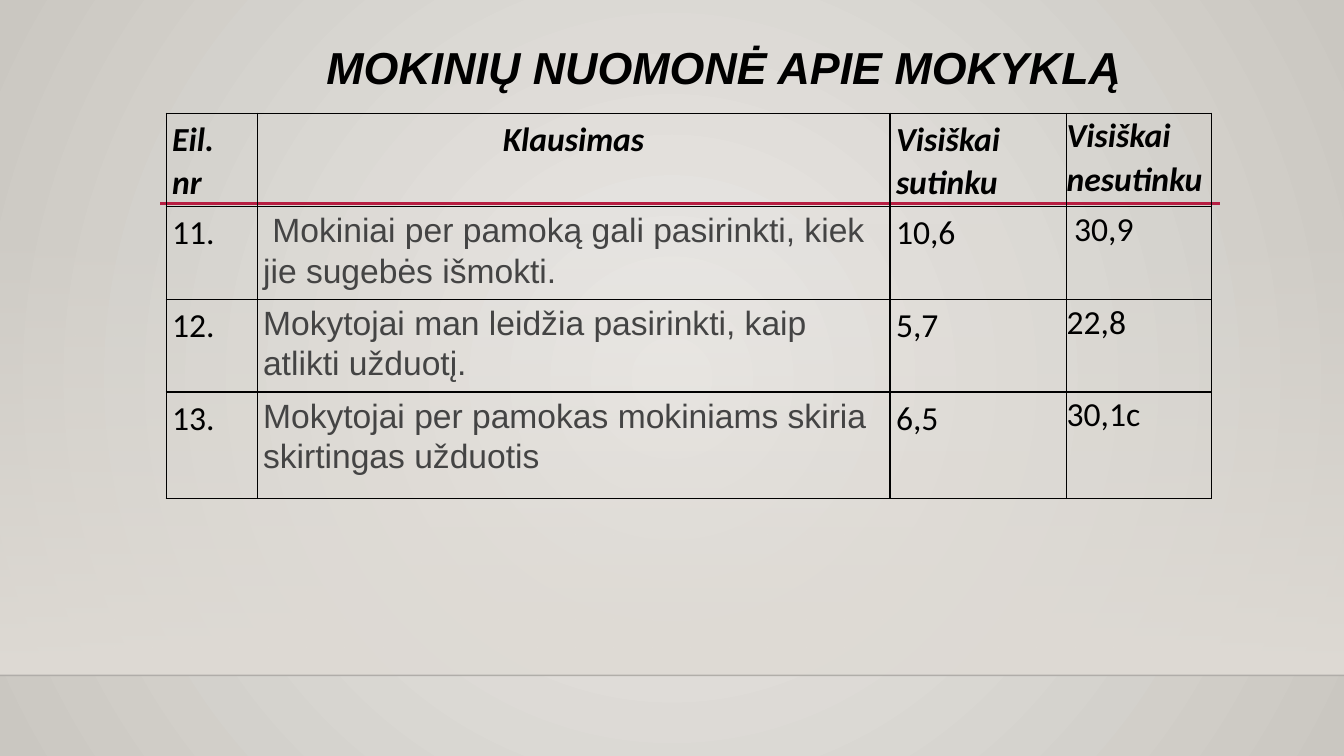
from lxml.etree import SubElement
from pptx import Presentation
from pptx.dml.color import RGBColor
from pptx.enum.shapes import MSO_CONNECTOR, MSO_SHAPE
from pptx.enum.text import PP_ALIGN
from pptx.oxml.ns import qn
from pptx.util import Cm, Pt

HEADINGS = ["Eil.\nnr", "Klausimas", "Visiškai sutinku", "Visiškai nesutinku"]
ANSWERS = [
    ["11.", " Mokiniai per pamoką gali pasirinkti, kiek jie sugebės išmokti.", "10,6", " 30,9"],
    ["12.", "Mokytojai man leidžia pasirinkti, kaip atlikti užduotį.", "5,7", "22,8"],
    ["13.", "Mokytojai per pamokas mokiniams skiria skirtingas užduotis", "6,5", "30,1c"],
]
COLUMN_WIDTHS = [2.29, 15.95, 4.45, 3.66]
ROW_HEIGHTS = [2.36, 2.26, 2.2, 2.69]


def rgb(value):
    """Turn a hex string into a colour."""
    return RGBColor.from_string(value)


def write(frame, text, size=24, font="Calibri", color="000000", bold=False,
          italic=False, align=PP_ALIGN.LEFT, spacing=1.07, insets=(0.15, 0.08)):
    """Fill a text frame or cell with one paragraph per line of text."""
    frame.margin_left = frame.margin_right = Cm(insets[0])
    frame.margin_top = frame.margin_bottom = Cm(insets[1])
    body = getattr(frame, "text_frame", frame)
    body.word_wrap = True
    body.text = text
    for paragraph in body.paragraphs:
        paragraph.alignment = align
        paragraph.line_spacing = spacing
        for run in paragraph.runs:
            run.font.name, run.font.size = font, Pt(size)
            run.font.bold, run.font.italic = bold, italic
            run.font.color.rgb = rgb(color)


def set_alpha(color_element, percent):
    """Give a colour element its opacity."""
    SubElement(color_element, qn("a:alpha"), val=str(percent * 1000))


def set_gradient(fill, first, last):
    """Make a two-colour gradient."""
    fill.gradient()
    for stop, color in zip(fill.gradient_stops, (first, last)):
        stop.color.rgb = rgb(color)


def add_rule(slide, left, top, width, color, weight, alpha=100):
    """Draw a horizontal line."""
    rule = slide.shapes.add_connector(
        MSO_CONNECTOR.STRAIGHT, Cm(left), Cm(top), Cm(left + width), Cm(top))
    rule.line.color.rgb = rgb(color)
    rule.line.width = Pt(weight)
    SubElement(rule.element.spPr, qn("a:effectLst"))
    if alpha < 100:
        set_alpha(next(rule.element.iter(qn("a:srgbClr"))), alpha)


def add_backdrop(slide, width, wall_top, floor_top):
    """Paint the radial background, the fading wall and the floor edge."""
    set_gradient(slide.background.fill, "ECEAE7", "CAC7C1")
    gradient = next(slide.element.iter(qn("a:gradFill")))
    for direction in gradient.findall(qn("a:lin")):
        gradient.remove(direction)
    circle = SubElement(gradient, qn("a:path"), path="circle")
    SubElement(circle, qn("a:fillToRect"), l="50000", t="50000", r="50000", b="50000")

    wall = slide.shapes.add_shape(
        MSO_SHAPE.RECTANGLE, 0, Cm(wall_top), Cm(width), Cm(floor_top - wall_top))
    wall.shadow.inherit = False
    wall.line.fill.background()
    set_gradient(wall.fill, "DFDBD5", "DFDBD5")
    wall.fill.gradient_angle = 270
    set_alpha(next(wall.element.spPr.iter(qn("a:srgbClr"))), 0)
    add_rule(slide, 0, floor_top, width, "000001", 1, alpha=20)


def add_title(slide, left, top, width, height):
    """Place the heading of the slide."""
    title = slide.shapes.add_textbox(Cm(left), Cm(top), Cm(width), Cm(height))
    write(title.text_frame, "MOKINIŲ NUOMONĖ APIE MOKYKLĄ", size=32, font="Arial",
          bold=True, italic=True, align=PP_ALIGN.CENTER, spacing=0.9,
          insets=(0.25, 0.13))


def add_borders(cell):
    """Draw thin black borders around a cell."""
    properties = cell._tc.get_or_add_tcPr()
    for position, side in enumerate(("a:lnL", "a:lnR", "a:lnT", "a:lnB")):
        border = SubElement(properties, qn(side), w=str(Pt(1)))
        properties.insert(position, border)
        SubElement(SubElement(border, qn("a:solidFill")), qn("a:srgbClr"), val="000000")


def add_survey(slide, left, top):
    """Place the table of questions and answers."""
    rows = [HEADINGS] + ANSWERS
    survey = slide.shapes.add_table(
        len(rows), len(HEADINGS), Cm(left), Cm(top),
        Cm(sum(COLUMN_WIDTHS)), Cm(sum(ROW_HEIGHTS))).table
    for column, width in zip(survey.columns, COLUMN_WIDTHS):
        column.width = Cm(width)
    for row, height in zip(survey.rows, ROW_HEIGHTS):
        row.height = Cm(height)
    for r, texts in enumerate(rows):
        for c, text in enumerate(texts):
            heading, question = r == 0, c == 1
            cell = survey.cell(r, c)
            cell.fill.background()
            add_borders(cell)
            write(cell, text, bold=heading, italic=heading,
                  font="Arial" if question and not heading else "Calibri",
                  color="444444" if question and not heading else "000000",
                  align=PP_ALIGN.CENTER if question and heading else PP_ALIGN.LEFT,
                  insets=(0, 0) if c == 3 else (0.15, 0.08))


def main():
    """Build the slide and save it."""
    deck = Presentation()
    deck.slide_width, deck.slide_height = Cm(33.87), Cm(19.05)
    slide = deck.slides.add_slide(deck.slide_layouts[6])
    add_backdrop(slide, 33.87, 5.61, 17.02)
    add_rule(slide, 4.04, 5.13, 26.7, "B71E42", 2.5)
    add_title(slide, 3.48, 1.02, 29.54, 3.66)
    add_survey(slide, 4.19, 2.85)
    deck.save("out.pptx")


if __name__ == "__main__":
    main()
